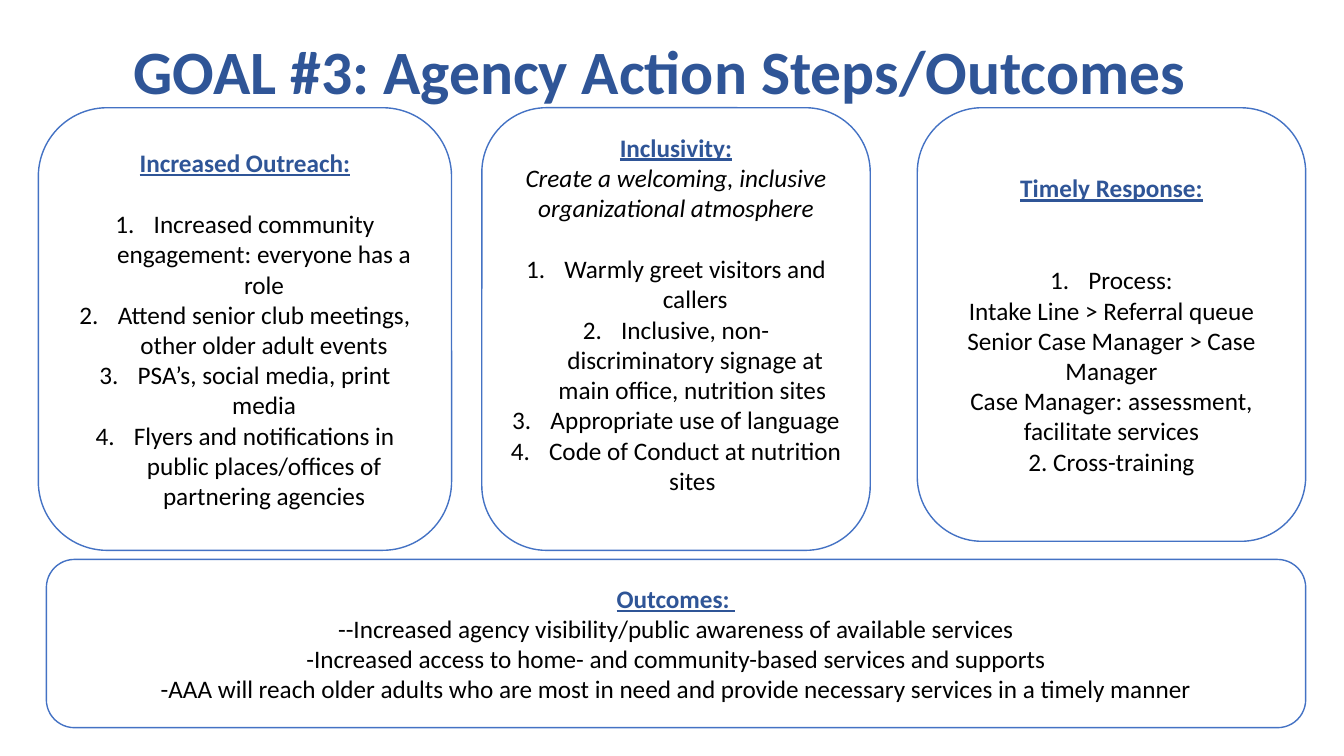
from lxml import etree
from pptx import Presentation
from pptx import util as u
from pptx.dml.color import RGBColor
from pptx.enum import shapes, text
from pptx.oxml.ns import qn

COLORS = {"heading": "2F5597", "outline": "4472C4", "body": "000000", "fill": "FFFFFF"}
FONT = "Calibri"
BODY_SIZE = 18
LINE = 22  # height of one body line, in points

deck = Presentation()
deck.slide_width, deck.slide_height = u.Inches(13.33), u.Inches(7.5)
# The grid has 100 columns and 100 rows
COL, ROW = deck.slide_width / 100, deck.slide_height / 100
page = deck.slides.add_slide(deck.slide_layouts[5])


def write(para, words, size=BODY_SIZE, color="body", bold=False, underline=False,
          italic=False, numbered=False, gap=0):
    """Fill one centred paragraph; gap is the space above it in lines."""
    para.alignment = text.PP_ALIGN.CENTER
    para.space_before = u.Pt(gap * LINE)
    if numbered:
        props = para._p.get_or_add_pPr()
        props.set("marL", str(u.Inches(0.38)))
        props.set("indent", str(-u.Inches(0.38)))
        etree.SubElement(props, qn("a:buAutoNum"), type="arabicPeriod")
    span = para.add_run()
    span.text = words
    font = span.font
    font.name, font.size = FONT, u.Pt(size)
    font.bold, font.underline, font.italic = bold, underline, italic
    font.color.rgb = RGBColor.from_string(COLORS[color])


def place(left, top, width, height):
    """Turn grid columns and rows into slide lengths."""
    return [round(n) for n in (left * COL, top * ROW, width * COL, height * ROW)]


# Title
title = page.shapes.title
title.left, title.top, title.width, title.height = place(1.1, -0.4, 96, 20.4)
title.text_frame.vertical_anchor = text.MSO_ANCHOR.MIDDLE
title.text_frame.word_wrap = True
title_para = title.text_frame.paragraphs[0]
title_para.line_spacing = 0.9
write(title_para, "GOAL #3: Agency Action Steps/Outcomes", size=44, color="heading", bold=True)

# Panels: grid place, heading, lines below it, blank lines at the foot
ITEM = {"numbered": True}
FIRST = {"numbered": True, "gap": 1}
panels = [
    ((2.85, 14.25, 30.75, 58.55), "Increased Outreach:", [
        ("Increased community engagement: everyone has a role", FIRST),
        ("Attend senior club meetings, other older adult events", ITEM),
        ("PSA’s, social media, print media", ITEM),
        ("Flyers and notifications in public places/offices of partnering agencies", ITEM),
    ], 0),
    ((35.85, 14.25, 28.9, 58.55), "Inclusivity:", [
        ("Create a welcoming, inclusive organizational atmosphere", {"italic": True}),
        ("Warmly greet visitors and callers", FIRST),
        ("Inclusive, non- discriminatory signage at main office, nutrition sites ", ITEM),
        ("Appropriate use of language", ITEM),
        ("Code of Conduct at nutrition sites ", ITEM),
    ], 1),
    ((68.25, 14.25, 28.9, 57.35), "Timely Response:", [
        ("Process:", {"numbered": True, "gap": 2}),
        ("Intake Line > Referral queue", {}),
        ("Senior Case Manager > Case Manager", {}),
        ("Case Manager: assessment, facilitate services", {}),
        ("2. Cross-training", {}),
    ], 0),
    ((3.45, 74, 93.7, 22.25), "Outcomes: ", [
        ("--Increased agency visibility/public awareness of available services", {}),
        ("-Increased access to home- and community-based services and supports", {}),
        ("-AAA will reach older adults who are most in need and provide necessary "
         "services in a timely manner", {}),
    ], 0),
]
for spot, heading, lines, foot in panels:
    box = page.shapes.add_shape(shapes.MSO_SHAPE.ROUNDED_RECTANGLE, *place(*spot))
    box.shadow.inherit = False
    box.fill.solid()
    box.fill.fore_color.rgb = RGBColor.from_string(COLORS["fill"])
    box.line.color.rgb = RGBColor.from_string(COLORS["outline"])
    box.line.width = u.Pt(1)
    frame = box.text_frame
    frame.word_wrap = True
    frame.vertical_anchor = text.MSO_ANCHOR.MIDDLE
    frame.margin_bottom = u.Inches(0.05) + u.Pt(foot * LINE)
    write(frame.paragraphs[0], heading, color="heading", bold=True, underline=True)
    for words, look in lines:
        write(frame.add_paragraph(), words, **look)

deck.save("out.pptx")
